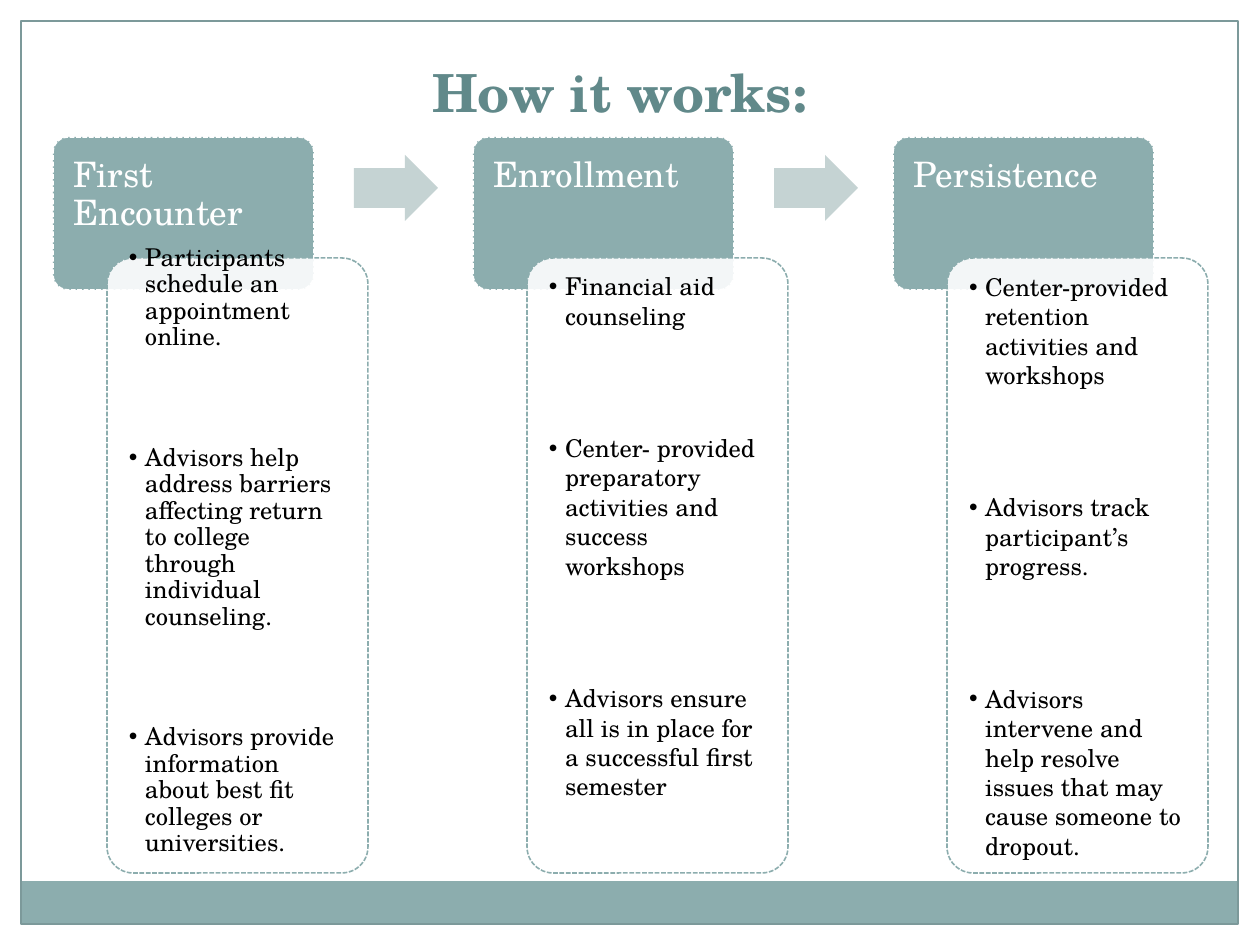
import dataclasses

import pptx
import pptx.dml.color
import pptx.enum.dml
import pptx.enum.shapes
import pptx.enum.text
import pptx.oxml
import pptx.oxml.ns
import pptx.util

ALIGN = pptx.enum.text.PP_ALIGN
ANCHOR = pptx.enum.text.MSO_ANCHOR
SHAPE = pptx.enum.shapes.MSO_SHAPE


@dataclasses.dataclass(frozen=True)
class Theme:
    font: str = "TeX Gyre Schola"
    teal: str = "8CADAE"
    pale: str = "C5D3D3"
    frame: str = "7C999A"
    title: str = "61898A"
    white: str = "FFFFFF"
    black: str = "000000"
    title_size: int = 30
    head_size: int = 20
    list_size: int = 14


def px(n):
    return pptx.util.Emu(round(n * 914400 / 126))


def rgb(value):
    return pptx.dml.color.RGBColor.from_string(value)


def assign(obj, values):
    for name, value in values.items():
        setattr(obj, name, value)


def append_xml(parent, tag, **attrs):
    child = pptx.oxml.parse_xml(f"<a:{tag} {pptx.oxml.ns.nsdecls('a')}/>")
    for name, value in attrs.items():
        child.set(name, value)
    parent.append(child)


class Deck:
    def __init__(self, prs, theme):
        self.theme = theme
        self.s = prs.slides.add_slide(prs.slide_layouts[4])

    def place(self, sp, box):
        assign(sp, dict(zip(("left", "top", "width", "height"), map(px, box))))

    def frame_text(self, sp, insets, anchor):
        tf = sp.text_frame
        sides = ("margin_left", "margin_top", "margin_right", "margin_bottom")
        assign(tf, dict(zip(sides, map(px, insets))))
        assign(tf, {"word_wrap": True, "vertical_anchor": anchor,
                    "auto_size": pptx.enum.text.MSO_AUTO_SIZE.NONE})
        return tf

    def add_text(self, p, text, size, color, bold=False, **layout):
        assign(p, layout)
        r = p.add_run()
        r.text = text
        assign(r.font, {"name": self.theme.font, "size": pptx.util.Pt(size), "bold": bold})
        r.font.color.rgb = rgb(color)

    def shape(self, kind, box, fill=None, line=None, width=0.9, dash=None, adj=(), alpha=None):
        sp = self.s.shapes.add_shape(kind, *map(px, box))
        sp.shadow.inherit = False
        for i, value in enumerate(adj):
            sp.adjustments[i] = value
        if fill:
            sp.fill.solid()
            sp.fill.fore_color.rgb = rgb(fill)
        else:
            sp.fill.background()
        if alpha:
            color = sp.element.spPr.find(".//" + pptx.oxml.ns.qn("a:srgbClr"))
            append_xml(color, "alpha", val=str(alpha * 1000))
        if line:
            sp.line.color.rgb = rgb(line)
            assign(sp.line, {"width": pptx.util.Pt(width), "dash_style": dash})
        else:
            sp.line.fill.background()
        return sp

    def card(self, box, fill, line, alpha=None):
        return self.shape(SHAPE.ROUNDED_RECTANGLE, box, fill, line, adj=(0.1,), alpha=alpha,
                          dash=pptx.enum.dml.MSO_LINE.SQUARE_DOT)

    def title(self, text, box):
        sp = self.s.shapes.title
        self.place(sp, box)
        tf = self.frame_text(sp, (12, 6, 12, 6), ANCHOR.MIDDLE)
        self.add_text(tf.paragraphs[0], text, self.theme.title_size, self.theme.title,
                      bold=True, alignment=ALIGN.CENTER)

    def heading(self, text, box):
        sp = self.card(box, self.theme.teal, self.theme.white)
        tf = self.frame_text(sp, (16, 16, 16, 6), ANCHOR.TOP)
        self.add_text(tf.paragraphs[0], text, self.theme.head_size, self.theme.white,
                      alignment=ALIGN.LEFT, line_spacing=0.9)

    def bullets(self, idx, items, box, spacing, gap, tail):
        sp = next(ph for ph in self.s.placeholders if ph.placeholder_format.idx == idx)
        sp.element.getparent().append(sp.element)
        self.place(sp, box)
        tf = self.frame_text(sp, (14, 14, 14, 14 + tail), ANCHOR.MIDDLE)
        for i, text in enumerate(items):
            p = tf.add_paragraph() if i else tf.paragraphs[0]
            self.add_text(p, text, self.theme.list_size, self.theme.black,
                          alignment=ALIGN.LEFT, line_spacing=spacing,
                          space_before=px(gap if i else 0), space_after=px(0))
            pPr = p._p.get_or_add_pPr()
            for name, value in {"marL": 16, "indent": -16}.items():
                pPr.set(name, str(px(value)))
            append_xml(pPr, "buChar", char="•")

    def arrow(self, box):
        self.shape(SHAPE.RIGHT_ARROW, box, self.theme.pale, adj=(0.6, 0.5))

    def drop_empty(self):
        for ph in list(self.s.placeholders):
            if not ph.text_frame.text:
                ph.element.getparent().remove(ph.element)


STEPS = [
    ("First Encounter", 0.9, 94, 30, [
        "Participants schedule an appointment online.",
        "Advisors help address barriers affecting return to college through "
        "individual counseling.",
        "Advisors provide information about best fit colleges or universities."]),
    ("Enrollment", 1.0, 103, 60, [
        "Financial aid counseling",
        "Center- provided preparatory activities and success workshops",
        "Advisors ensure all is in place for a successful first semester"]),
    ("Persistence", 1.0, 103, 0, [
        "Center-provided retention activities and workshops",
        "Advisors track participant’s progress.",
        "Advisors intervene and help resolve issues that may cause someone to dropout."]),
]


def main():
    prs = pptx.Presentation()
    assign(prs, {"slide_width": px(1260), "slide_height": px(945)})
    theme = Theme()
    deck = Deck(prs, theme)
    deck.shape(SHAPE.RECTANGLE, (21, 881, 1217, 43), theme.teal)
    deck.shape(SHAPE.RECTANGLE, (21, 21, 1217, 903), line=theme.frame, width=0.75)
    deck.title("How it works:", (32, 53, 1175, 77))
    for i, (name, spacing, gap, tail, items) in enumerate(STEPS):
        x = 53 + 420 * i
        deck.heading(name, (x, 137, 261, 153))
        deck.card((x + 54, 258, 261, 615), theme.white, theme.teal, alpha=90)
        deck.bullets(i + 1, items, (x + 62, 266, 246, 600), spacing, gap, tail)
        if i < len(STEPS) - 1:
            deck.arrow((x + 301, 155, 84, 66))
    deck.drop_empty()
    prs.save("out.pptx")


if __name__ == "__main__":
    main()
